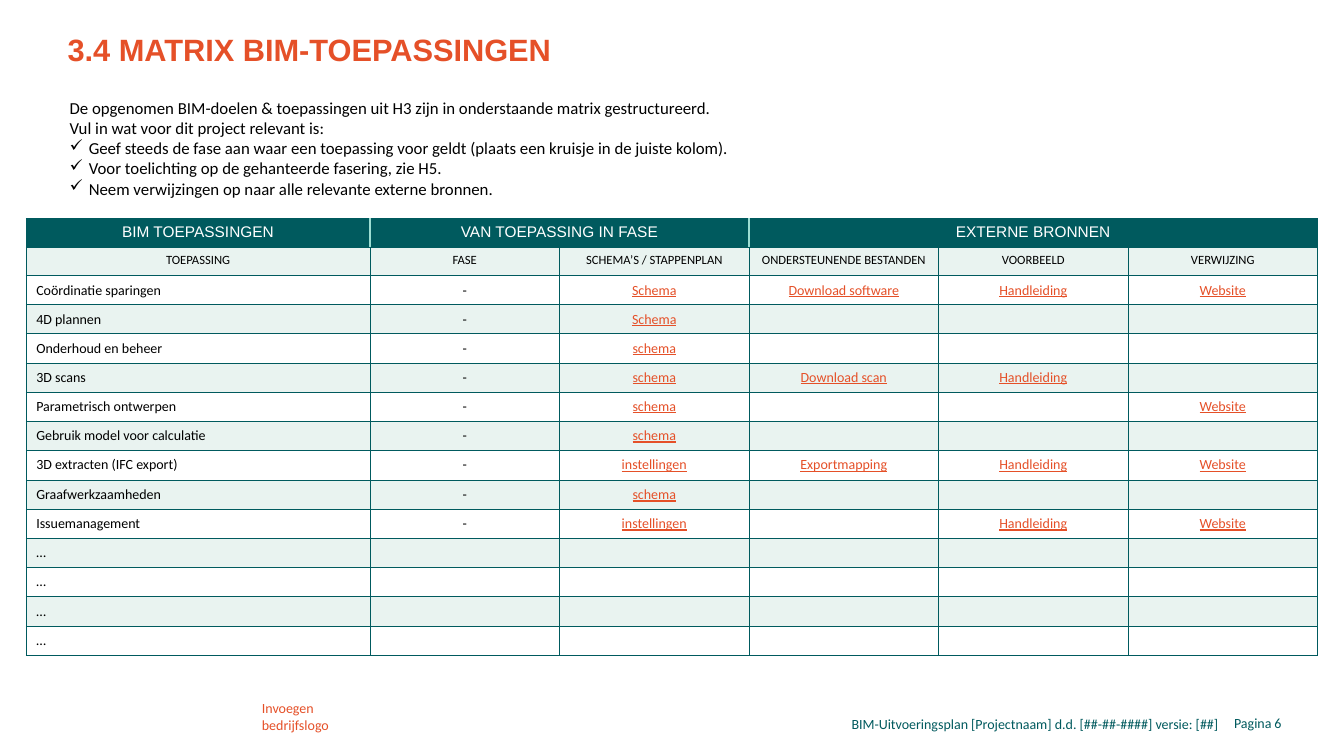
from lxml.etree import SubElement
from pptx import Presentation
from pptx.dml.color import RGBColor
from pptx.enum.text import MSO_ANCHOR, PP_ALIGN
from pptx.oxml.ns import qn
from pptx.util import Inches, Pt

THEME = {
    "teal": "005A5E", "orange": "E55028", "mint": "9DDED3", "pale": "E9F3F0",
    "white": "FFFFFF", "black": "000000",
    "heading_font": "Arial", "body_font": "Calibri",
    "title": 22, "intro": 12, "group": 11, "small": 10, "column": 9,
}

presentation = Presentation()
presentation.slide_width, presentation.slide_height = Inches(13.33), Inches(7.5)
slide = presentation.slides.add_slide(presentation.slide_layouts[6])
percent_x, percent_y = presentation.slide_width / 100, presentation.slide_height / 100


def write(frame, lines, size, color, font="body_font", align=PP_ALIGN.LEFT, bold=False,
          underline=False, bullets_from=None):
    """Fill a text frame with one paragraph per line."""
    for index, line in enumerate(lines):
        paragraph = frame.paragraphs[0] if index == 0 else frame.add_paragraph()
        paragraph.text = line
        paragraph.alignment = align
        if bullets_from is not None and index >= bullets_from:
            properties = paragraph._p.get_or_add_pPr()
            properties.set("marL", str(Inches(0.19)))
            properties.set("indent", str(-Inches(0.19)))
            SubElement(properties, qn("a:buChar")).set("char", "✓")
        paragraph.font.name = THEME[font]
        paragraph.font.size = Pt(THEME[size])
        paragraph.font.color.rgb = RGBColor.from_string(THEME[color])
        paragraph.font.bold = bold
        paragraph.font.underline = underline
        if not line:  # keeps empty table cells at the height of their row
            SubElement(paragraph._p, qn("a:endParaRPr")).set("sz", str(THEME[size] * 100))


def style_cell(cell, fill, edges=None):
    """Give a cell its four borders and its fill."""
    properties = cell._tc.get_or_add_tcPr()
    for side in ("lnL", "lnR", "lnT", "lnB"):
        color, width = (edges or {}).get(side, ("teal", 0.75))
        line = SubElement(properties, qn(f"a:{side}"), w=str(Pt(width)))
        SubElement(SubElement(line, qn("a:solidFill")), qn("a:srgbClr"), val=THEME[color])
    cell.fill.solid()
    cell.fill.fore_color.rgb = RGBColor.from_string(THEME[fill])


# Text boxes: place in percent of the slide, margins in inches, lines, style
INTRO = [
    "De opgenomen BIM-doelen & toepassingen uit H3 zijn in onderstaande matrix gestructureerd.",
    "Vul in wat voor dit project relevant is:",
    "Geef steeds de fase aan waar een toepassing voor geldt (plaats een kruisje in de juiste kolom).",
    "Voor toelichting op de gehanteerde fasering, zie H5.",
    "Neem verwijzingen op naar alle relevante externe bronnen.",
]
footer = {"size": "small", "color": "teal"}
text_boxes = [
    ((5.03, 3.47, 43.59, 6.27), (0, 0.05, 0.1, 0.05), ["3.4 MATRIX BIM-TOEPASSINGEN"],
     {"size": "title", "color": "orange", "font": "heading_font", "bold": True}),
    ((5.18, 12.93, 55.21, 13.47), (0, 0, 0, 0), INTRO,
     {"size": "intro", "color": "black", "bullets_from": 2}),
    ((18.75, 91.87, 8.55, 5.87), (0.1, 0.05, 0.1, 0.05), ["Invoegen", "bedrijfslogo"],
     {"size": "small", "color": "orange"}),
    ((50.79, 94, 40.58, 3.6), (0.1, 0.05, 0.1, 0.05),
     ["BIM-Uitvoeringsplan [Projectnaam] d.d. [##-##-####] versie: [##]"],
     {**footer, "align": PP_ALIGN.RIGHT}),
    ((90.55, 93.87, 4.05, 3.6), (0, 0.05, 0, 0.05), ["Pagina"],
     {**footer, "align": PP_ALIGN.RIGHT}),
    ((94.6, 93.87, 3.3, 3.6), (0.03, 0.05, 0, 0.05), ["6"], footer),
]
for (left, top, width, height), margins, lines, style in text_boxes:
    box = slide.shapes.add_textbox(int(left * percent_x), int(top * percent_y),
                                   int(width * percent_x), int(height * percent_y))
    frame = box.text_frame
    frame.word_wrap = True
    (frame.margin_left, frame.margin_top,
     frame.margin_right, frame.margin_bottom) = map(Inches, margins)
    write(frame, lines, **style)

# Matrix: a header table and a body table on the same columns
GROUPS = [("BIM TOEPASSINGEN", 0, 0), ("VAN TOEPASSING IN FASE", 1, 2), ("EXTERNE BRONNEN", 3, 5)]
COLUMNS = ["TOEPASSING", "FASE", "SCHEMA’S / STAPPENPLAN", "ONDERSTEUNENDE BESTANDEN",
           "VOORBEELD", "VERWIJZING"]
APPLICATIONS = [
    ["Coördinatie sparingen", "-", "Schema", "Download software", "Handleiding", "Website"],
    ["4D plannen", "-", "Schema", "", "", ""],
    ["Onderhoud en beheer", "-", "schema", "", "", ""],
    ["3D scans", "-", "schema", "Download scan", "Handleiding", ""],
    ["Parametrisch ontwerpen", "-", "schema", "", "", "Website"],
    ["Gebruik model voor calculatie", "-", "schema", "", "", ""],
    ["3D extracten (IFC export)", "-", "instellingen", "Exportmapping", "Handleiding", "Website"],
    ["Graafwerkzaamheden", "-", "schema", "", "", ""],
    ["Issuemanagement", "-", "instellingen", "", "Handleiding", "Website"],
] + [["…", "", "", "", "", ""]] * 4
TALL_ROWS = (6, 11)
column_widths = [25.58] + [14.1] * 5
header_heights = [3.75] * 2
body_heights = [4 if row in TALL_ROWS else 3.84 for row in range(len(APPLICATIONS))]

tables = []
for top, heights in ((28.93, header_heights), (36.5, body_heights)):
    table = slide.shapes.add_table(
        len(heights), len(column_widths), int(1.95 * percent_x), int(top * percent_y),
        int(sum(column_widths) * percent_x), int(sum(heights) * percent_y)).table
    table.first_row = table.horz_banding = False
    for column, width in zip(table.columns, column_widths):
        column.width = int(width * percent_x)
    for row, height in zip(table.rows, heights):
        row.height = int(height * percent_y)
    tables.append(table)
header, body = tables

# Header: merged groups, then column names
for name, first, last in GROUPS:
    edges = {}
    if first > 0:
        edges["lnL"] = ("mint", 1)
    if last < len(COLUMNS) - 1:
        edges["lnR"] = ("mint", 1)
    for index in range(first, last + 1):
        style_cell(header.cell(0, index), "teal", edges)
    if last > first:
        header.cell(0, first).merge(header.cell(0, last))
    write(header.cell(0, first).text_frame, [name], "group", "white", "heading_font",
          PP_ALIGN.CENTER)
for index, name in enumerate(COLUMNS):
    cell = header.cell(1, index)
    style_cell(cell, "pale")
    write(cell.text_frame, [name], "column", "black", align=PP_ALIGN.CENTER)

# Body: banded rows, with link-styled text from the third column on
for row, values in enumerate(APPLICATIONS):
    for index, value in enumerate(values):
        cell = body.cell(row, index)
        cell.vertical_anchor = MSO_ANCHOR.MIDDLE
        cell.margin_top = cell.margin_bottom = Inches(0.06)
        style_cell(cell, "pale" if row % 2 else "white")
        is_link = index >= 2
        write(cell.text_frame, [value], "small", "orange" if is_link else "black",
              align=PP_ALIGN.CENTER if index else PP_ALIGN.LEFT, underline=is_link)

presentation.save("out.pptx")
